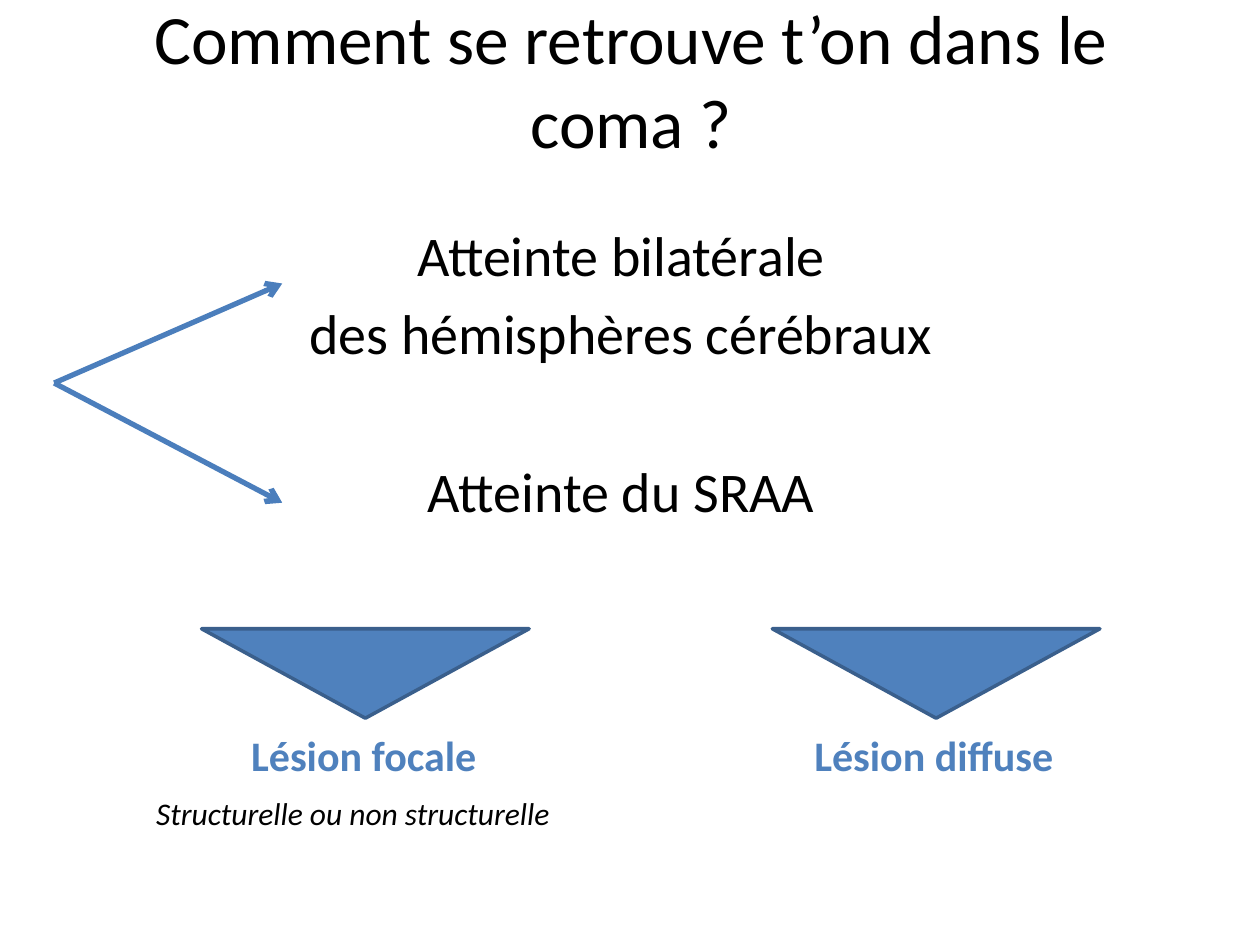
from lxml.etree import SubElement
from pptx import Presentation
from pptx.dml.color import RGBColor
from pptx.enum.shapes import MSO_CONNECTOR, MSO_SHAPE
from pptx.enum.text import MSO_ANCHOR, MSO_AUTO_SIZE, PP_ALIGN
from pptx.oxml.ns import qn
from pptx.util import Inches, Pt

BLACK, BLUE, ARROW_BLUE, EDGE_BLUE = "000000", "4F81BD", "4B7EBC", "3A5F8C"


def color(hex_code):
    """Turn a hex string into a colour."""
    return RGBColor.from_string(hex_code)


class SlideBuilder:
    """Holds the text style and the slide being built."""

    font = "Calibri"

    def __init__(self, slide):
        """Start working on the given slide."""
        self.slide = slide

    def add_run(self, paragraph, text, size, ink=BLACK, bold=False, italic=False):
        """Append one styled run to a paragraph."""
        run = paragraph.add_run()
        run.text = text
        run.font.name, run.font.size = self.font, Pt(size)
        run.font.bold, run.font.italic = bold, italic
        run.font.color.rgb = color(ink)

    def title(self, text, left, top, width, height, size):
        """Place and fill the title placeholder."""
        heading = self.slide.shapes.title
        heading.left, heading.top = Inches(left), Inches(top)
        heading.width, heading.height = Inches(width), Inches(height)
        heading.text_frame.vertical_anchor = MSO_ANCHOR.MIDDLE
        paragraph = heading.text_frame.paragraphs[0]
        paragraph.alignment = PP_ALIGN.CENTER
        self.add_run(paragraph, text, size)

    def text_box(self, left, top, width, height):
        """Add an empty text box and return its frame."""
        return self.slide.shapes.add_textbox(
            Inches(left), Inches(top), Inches(width), Inches(height)).text_frame

    def body(self, lines, left, top, width, height, size):
        """Add centred lines, each with its space before in points."""
        frame = self.text_box(left, top, width, height)
        frame.word_wrap = True
        for index, (text, gap) in enumerate(lines):
            paragraph = frame.add_paragraph() if index else frame.paragraphs[0]
            paragraph.alignment = PP_ALIGN.CENTER
            paragraph.space_before = Pt(gap)
            self.add_run(paragraph, text, size)

    def label(self, text, left, top, width, height, size, **style):
        """Add a one-line label that fits its text."""
        frame = self.text_box(left, top, width, height)
        frame.word_wrap = False
        frame.auto_size = MSO_AUTO_SIZE.SHAPE_TO_FIT_TEXT
        self.add_run(frame.paragraphs[0], text, size, **style)

    def arrow(self, start, end):
        """Draw an open-headed arrow between two points."""
        connector = self.slide.shapes.add_connector(
            MSO_CONNECTOR.STRAIGHT, *(Inches(value) for value in (*start, *end)))
        connector.line.color.rgb = color(ARROW_BLUE)
        connector.line.width = Pt(3)
        SubElement(connector.line._get_or_add_ln(), qn("a:tailEnd"), type="arrow")
        SubElement(connector._element.spPr, qn("a:effectLst"))

    def triangle(self, left, top, width, height):
        """Draw a triangle that points down."""
        merge = self.slide.shapes.add_shape(
            MSO_SHAPE.FLOWCHART_MERGE,
            Inches(left), Inches(top), Inches(width), Inches(height))
        merge.shadow.inherit = False
        merge.fill.solid()
        merge.fill.fore_color.rgb = color(BLUE)
        merge.line.color.rgb = color(EDGE_BLUE)
        merge.line.width = Pt(2)


def main():
    """Build and save the slide."""
    deck = Presentation()
    deck.slide_width, deck.slide_height = Inches(10), Inches(7.5)
    builder = SlideBuilder(deck.slides.add_slide(deck.slide_layouts[5]))

    builder.title("Comment se retrouve t’on dans le coma ?", 0.51, 0, 9, 1.25, 39.6)
    causes = [("Atteinte bilatérale", 6.4),
              ("des hémisphères cérébraux", 6.4),
              ("Atteinte du SRAA", 51.5)]
    builder.body(causes, 0.43, 1.7, 9, 2.68, 32)
    for cause_y in (2.25, 3.99):
        builder.arrow((0.43, 3.04), (2.24, cause_y))

    lesions = [("Lésion focale", 2.9, 2.01), ("Lésion diffuse", 7.43, 2.13)]
    for lesion, center, label_width in lesions:
        builder.triangle(center - 1.3, 4.99, 2.6, 0.71)
        builder.label(lesion, center - label_width / 2, 5.74, label_width, 0.5, 24,
                      ink=BLUE, bold=True)
    builder.label("Structurelle ou non structurelle", 1.14, 6.25, 3.42, 0.4, 18,
                  italic=True)
    deck.save("out.pptx")


if __name__ == "__main__":
    main()
